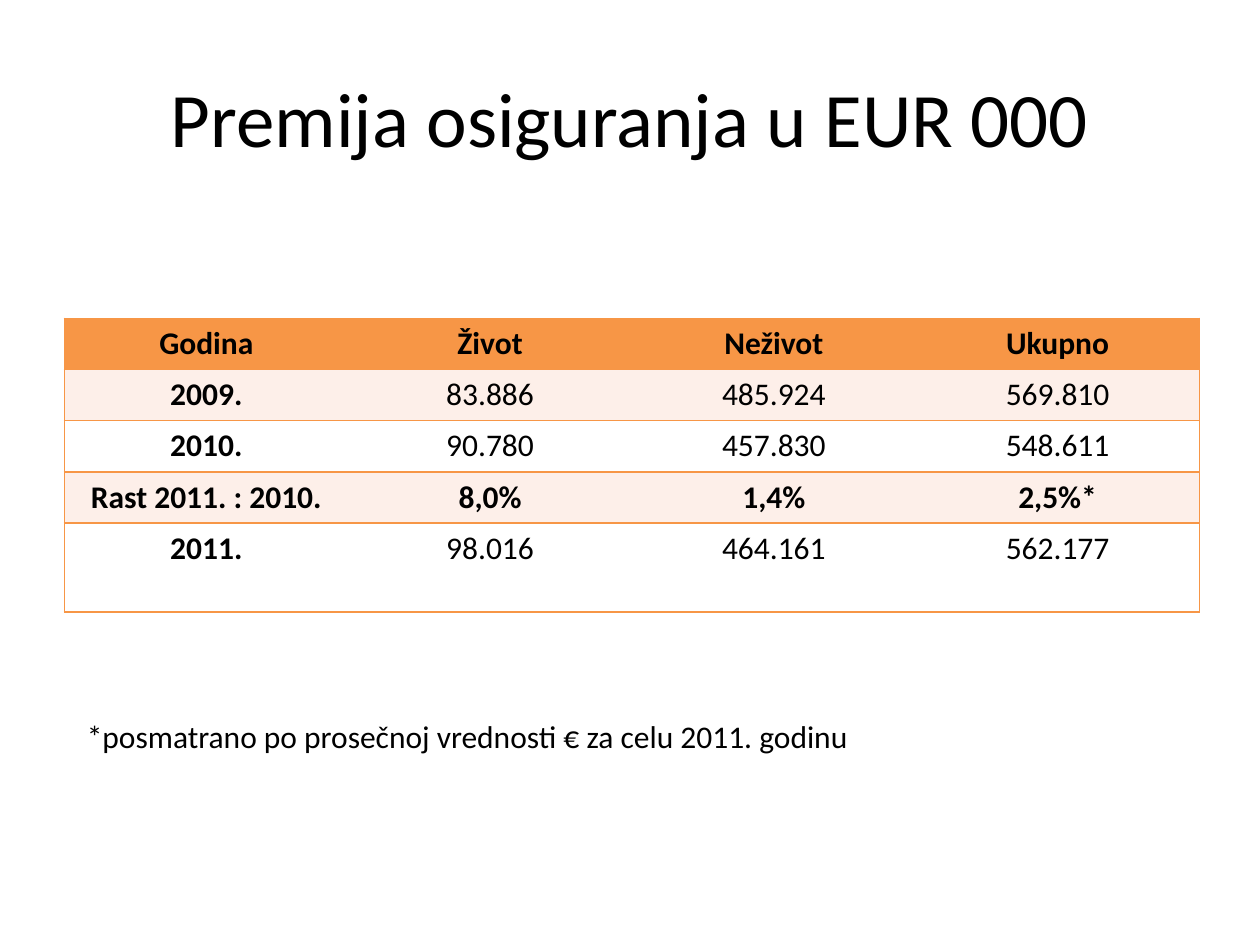
"""Build the slide of insurance premiums by year."""
import lxml.etree
import pptx
import pptx.dml.color
import pptx.enum.text
import pptx.oxml.ns
import pptx.util

Cm = pptx.util.Cm
ALIGN = pptx.enum.text.PP_ALIGN
ANCHOR = pptx.enum.text.MSO_ANCHOR

TITLE = "Premija osiguranja u EUR 000"
NOTE = "*posmatrano po prosečnoj vrednosti € za celu 2011. godinu"
PREMIUMS = [
    ("Godina", "Život", "Neživot", "Ukupno"),
    ("2009.", "83.886", "485.924", "569.810"),
    ("2010.", "90.780", "457.830", "548.611"),
    ("Rast 2011. : 2010.", "8,0%", "1,4%", "2,5%*"),
    ("2011.", "98.016", "464.161", "562.177"),
]
BOLD_ROWS = (0, 3)
ORANGE, PEACH, WHITE, BLACK = "F79646", "FDEFE9", "FFFFFF", "000000"
ROW_HEIGHT, LAST_ROW_HEIGHT, COLUMN_WIDTH = 1.03, 1.8, 5.72
TABLE_LEFT, TABLE_TOP = 1.3, 6.42
TITLE_FORMAT = {"size": pptx.util.Pt(44), "name": "Calibri", "bold": False}
BODY_FORMAT = {"size": pptx.util.Pt(18), "name": "Calibri", "bold": False}


def color(value):
    return pptx.dml.color.RGBColor.from_string(value)


def write(text_frame, text, font_format, alignment):
    paragraph = text_frame.paragraphs[0]
    paragraph.alignment = alignment
    run = paragraph.add_run()
    run.text = text
    for name, value in font_format.items():
        setattr(run.font, name, value)
    run.font.color.rgb = color(BLACK)


def add_text(slide, box, text, font_format, alignment, anchor):
    shape = slide.shapes.add_textbox(*map(Cm, box))
    shape.text_frame.word_wrap = True
    shape.text_frame.vertical_anchor = anchor
    write(shape.text_frame, text, font_format, alignment)


def set_borders(cell, borders):
    properties = cell._tc.get_or_add_tcPr()
    qn = pptx.oxml.ns.qn
    for index, (side, value) in enumerate(borders.items()):
        line = lxml.etree.Element(qn(f"a:ln{side}"), w=str(pptx.util.Pt(1)))
        if value:
            fill = lxml.etree.SubElement(line, qn("a:solidFill"))
            lxml.etree.SubElement(fill, qn("a:srgbClr"), val=value)
        else:
            lxml.etree.SubElement(line, qn("a:noFill"))
        properties.insert(index, line)


def add_premium_table(slide):
    row_count, column_count = len(PREMIUMS), len(PREMIUMS[0])
    heights = [ROW_HEIGHT] * (row_count - 1) + [LAST_ROW_HEIGHT]
    box = (TABLE_LEFT, TABLE_TOP, COLUMN_WIDTH * column_count, sum(heights))
    table = slide.shapes.add_table(row_count, column_count, *map(Cm, box)).table
    for column in table.columns:
        column.width = Cm(COLUMN_WIDTH)
    for row_index, values in enumerate(PREMIUMS):
        table.rows[row_index].height = Cm(heights[row_index])
        fill = ORANGE if row_index == 0 else (WHITE, PEACH)[row_index % 2]
        for column_index, value in enumerate(values):
            cell = table.cell(row_index, column_index)
            cell.fill.solid()
            cell.fill.fore_color.rgb = color(fill)
            bold = row_index in BOLD_ROWS or column_index == 0
            write(cell.text_frame, value, BODY_FORMAT | {"bold": bold}, ALIGN.CENTER)
            set_borders(cell, {
                "L": ORANGE if column_index == 0 else None,
                "R": ORANGE if column_index == column_count - 1 else None,
                "T": ORANGE,
                "B": ORANGE,
            })


def main():
    presentation = pptx.Presentation()
    presentation.slide_width, presentation.slide_height = Cm(25.4), Cm(19.05)
    slide = presentation.slides.add_slide(presentation.slide_layouts[6])
    add_text(slide, (1.27, 0.76, 22.86, 3.18), TITLE, TITLE_FORMAT,
             ALIGN.CENTER, ANCHOR.MIDDLE)
    add_premium_table(slide)
    add_text(slide, (1.5, 14.33, 18.4, 1.8), NOTE, BODY_FORMAT,
             ALIGN.LEFT, ANCHOR.TOP)
    presentation.save("out.pptx")


if __name__ == "__main__":
    main()
